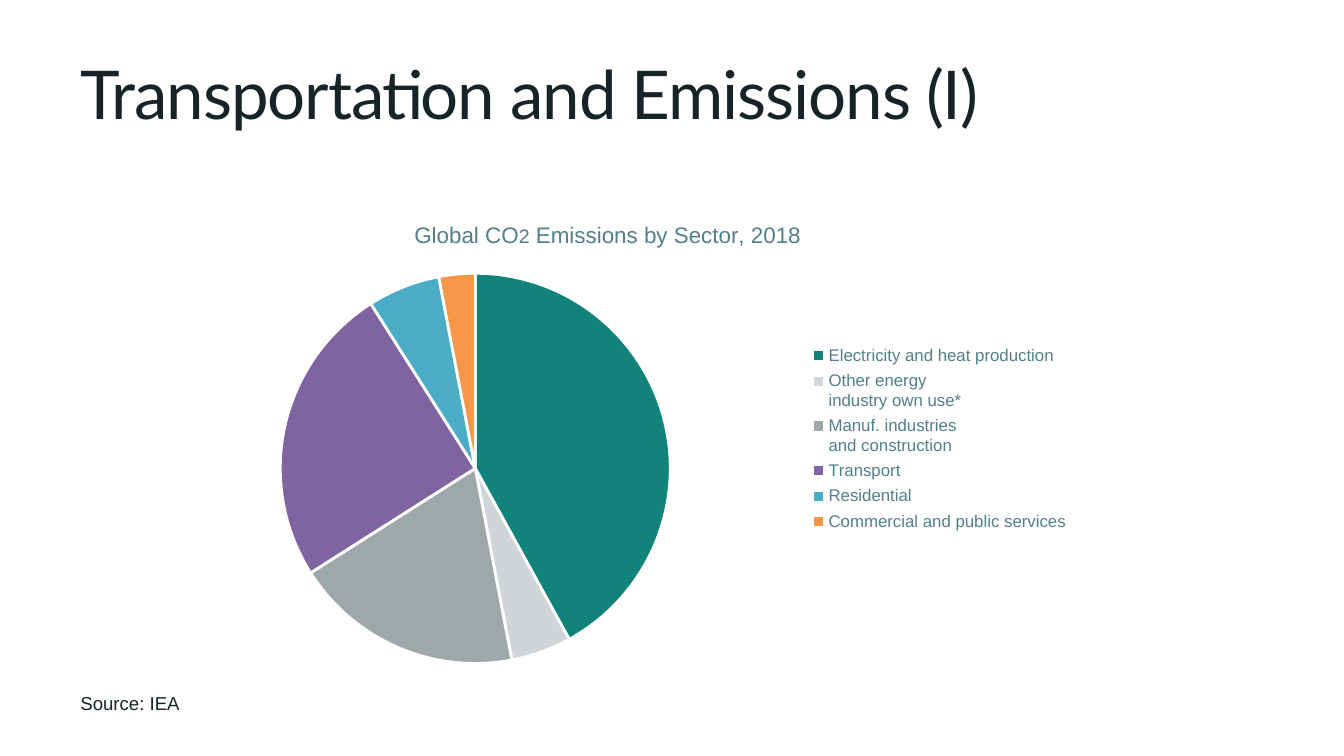
from dataclasses import dataclass

from lxml.etree import SubElement
from pptx import Presentation
from pptx.chart.chart import Chart
from pptx.chart.data import CategoryChartData
from pptx.dml.color import RGBColor
from pptx.enum.chart import XL_CHART_TYPE, XL_LEGEND_POSITION
from pptx.enum.text import MSO_ANCHOR, MSO_AUTO_SIZE, PP_ALIGN
from pptx.oxml.ns import qn
from pptx.util import Cm, Pt


@dataclass(frozen=True)
class Theme:
    ink: str = "172427"
    label: str = "517F8A"
    edge: str = "FFFFFF"
    title_font: str = "Lato"
    body_font: str = "Arial"
    title_size: float = 36
    chart_title_size: float = 12
    digit_size: float = 10.5
    source_size: float = 10
    legend_size: float = 9


@dataclass(frozen=True)
class Sector:
    name: str
    share: int
    color: str


THEME = Theme()
SECTORS = [
    Sector("Electricity and heat production", 42, "11837A"),
    Sector("Other energy\nindustry own use*", 5, "D0D5D8"),
    Sector("Manuf. industries\nand construction", 19, "9EA7AA"),
    Sector("Transport", 25, "8064A2"),
    Sector("Residential", 6, "4BACC6"),
    Sector("Commercial and public services", 3, "F79646"),
]


def style_font(font, *, size: float, color: str = THEME.ink,
               name: str = THEME.body_font) -> None:
    font.name = name
    font.size = Pt(size)
    font.bold = False
    font.color.rgb = RGBColor.from_string(color)


def add_run(p, text: str, *, spacing: int = 0, **style) -> None:
    r = p.add_run()
    r.text = text
    style_font(r.font, **style)
    if spacing:
        r.font._element.set("spc", str(spacing))


def set_layout(parent, x: float, y: float, w: float = 0, h: float = 0,
               inner: bool = False) -> None:
    """Place a chart part by fractions of the chart area."""
    layout = parent.find(qn("c:layout"))
    if layout is None:
        layout = SubElement(parent, qn("c:layout"))
        anchor = next(parent.iterchildren(qn("c:tx"), qn("c:legendPos")), None)
        if anchor is None:
            parent.insert(0, layout)
        else:
            anchor.addnext(layout)
    for child in list(layout):
        layout.remove(child)
    manual = SubElement(layout, qn("c:manualLayout"))
    values = [("layoutTarget", "inner")] if inner else []
    values += [("xMode", "edge"), ("yMode", "edge"), ("x", x), ("y", y)]
    if w and h:
        values += [("w", w), ("h", h)]
    for tag, value in values:
        SubElement(manual, qn(f"c:{tag}")).set("val", str(value))


def add_pie(slide, sectors: list[Sector]) -> Chart:
    data = CategoryChartData()
    data.categories = [s.name for s in sectors]
    data.add_series("Series 1", [s.share for s in sectors])
    chart = slide.shapes.add_chart(XL_CHART_TYPE.PIE, Cm(2.84), Cm(3.63),
                                   Cm(17.55), Cm(9.32), data).chart
    style_font(chart.font, size=THEME.source_size)

    # Slices
    plot = chart.plots[0]
    plot.vary_by_categories = True
    for i, sector in enumerate(sectors):
        fmt = plot.series[0].points[i].format
        fmt.fill.solid()
        fmt.fill.fore_color.rgb = RGBColor.from_string(sector.color)
        fmt.line.color.rgb = RGBColor.from_string(THEME.edge)
        fmt.line.width = Pt(1.5)

    # Chart title
    p = chart.chart_title.text_frame.paragraphs[0]
    for text, size in (("Global CO", THEME.chart_title_size),
                       ("2", THEME.digit_size),
                       (" Emissions by Sector, 2018", THEME.chart_title_size)):
        add_run(p, text, size=size, color=THEME.label)

    # Legend
    chart.has_legend = True
    legend = chart.legend
    legend.position = XL_LEGEND_POSITION.RIGHT
    legend.include_in_layout = False
    style_font(legend.font, size=THEME.legend_size, color=THEME.label)

    # Positions inside the chart
    set_layout(chart.chart_title._element, 0.28, 0.05)
    set_layout(legend._element, 0.7, 0.3, 0.3, 0.4)
    plot_area = chart._chartSpace.chart.plotArea
    set_layout(plot_area, 0.14, 0.16, 0.42, 0.8, inner=True)
    return chart


def main() -> None:
    prs = Presentation()
    prs.slide_width, prs.slide_height = Cm(25.4), Cm(14.28)
    slide = prs.slides.add_slide(prs.slide_layouts[5])

    # Title
    title = slide.shapes.title
    title.left, title.top = Cm(1.27), Cm(0.33)
    title.width, title.height = Cm(19.84), Cm(2.31)
    tf = title.text_frame
    tf.auto_size = MSO_AUTO_SIZE.NONE
    tf.vertical_anchor = MSO_ANCHOR.BOTTOM
    p = tf.paragraphs[0]
    p.alignment = PP_ALIGN.LEFT
    add_run(p, "Transportation and Emissions (I)", size=THEME.title_size,
            name=THEME.title_font, spacing=-60)

    # Emissions chart
    add_pie(slide, SECTORS)

    # Source note
    note = slide.shapes.add_textbox(Cm(1.27), Cm(12.95), Cm(2.41), Cm(0.69))
    tf = note.text_frame
    tf.word_wrap = False
    tf.auto_size = MSO_AUTO_SIZE.SHAPE_TO_FIT_TEXT
    add_run(tf.paragraphs[0], "Source: IEA", size=THEME.source_size)

    prs.save("out.pptx")


if __name__ == "__main__":
    main()
